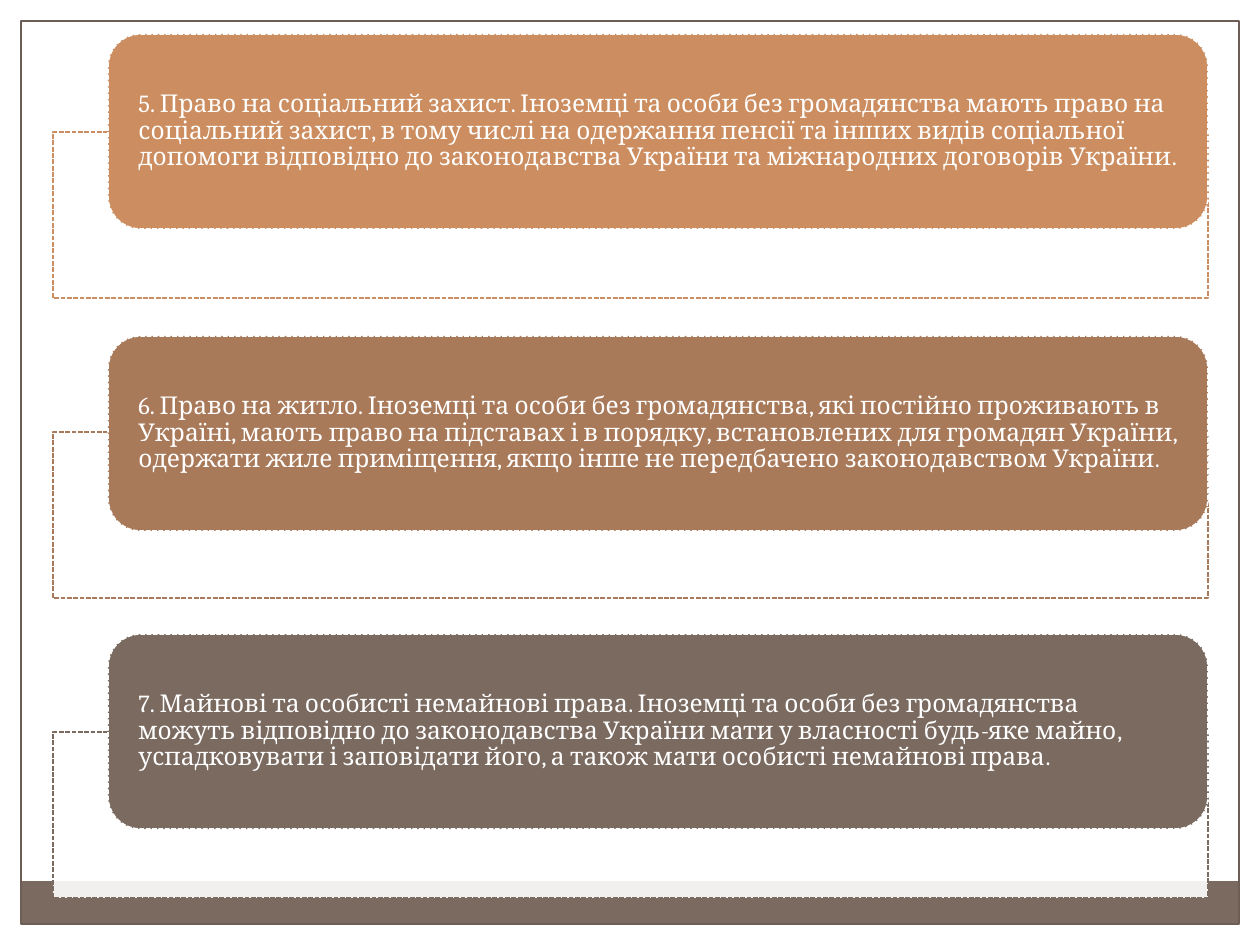
from lxml import etree
from pptx import Presentation
from pptx import util as u
from pptx.dml.color import RGBColor
from pptx.enum import dml, shapes, text
from pptx.oxml.ns import qn

PX = 914400 / 126
WHITE, BROWN = "FFFFFF", "7A6A60"

RIGHTS = [  # text, colour, top of the rounded panel
    ("5. Право на соціальний захист. Іноземці та особи без громадянства мають право на "
     "соціальний захист, в тому числі на одержання пенсії та інших видів соціальної "
     "допомоги відповідно до законодавства України та міжнародних договорів України.",
     "CC8E60", 34),
    ("6. Право на житло. Іноземці та особи без громадянства, які постійно проживають в "
     "Україні, мають право на підставах і в порядку, встановлених для громадян України, "
     "одержати жиле приміщення, якщо інше не передбачено законодавством України.",
     "A97A5A", 336),
    ("7. Майнові та особисті немайнові права. Іноземці та особи без громадянства можуть "
     "відповідно до законодавства України мати у власності будь-яке майно, успадковувати "
     "і заповідати його, а також мати особисті немайнові права.",
     BROWN, 634),
]


def px(n):
    return u.Emu(round(n * PX))


def rgb(value):
    return RGBColor.from_string(value)


def add_box(slide, kind, box, fill=None, line=None, width=0.9, dashed=False):
    shape = slide.shapes.add_shape(kind, *map(px, box))
    shape.shadow.inherit = False
    if fill:
        shape.fill.solid()
        shape.fill.fore_color.rgb = rgb(fill)
    else:
        shape.fill.background()
    if line:
        shape.line.color.rgb = rgb(line)
        shape.line.width = u.Pt(width)
        if dashed:
            shape.line.dash_style = dml.MSO_LINE.SQUARE_DOT
    else:
        shape.line.fill.background()
    return shape


def set_opacity(shape, percent):
    colour = shape.fill._xPr.find(qn("a:solidFill"))[0]
    etree.SubElement(colour, qn("a:alpha"), val=str(percent * 1000))


def add_page_border(slide, width, height, margin=21):
    rect = shapes.MSO_SHAPE.RECTANGLE
    inner = width - 2 * margin
    # White margins
    for edge in [(0, 0, width, margin), (width - margin, 0, margin, height),
                 (0, 0, margin, height)]:
        add_box(slide, rect, edge, WHITE)
    # Footer band and outline
    add_box(slide, rect, (margin, 881, inner, 43), BROWN)
    add_box(slide, rect, (margin, margin, inner, height - 2 * margin),
            line="6C5E55", width=0.75)


def add_right(slide, box, wording, colour, panel_top):
    left, top, width, height = box
    # Dashed frame behind the panel
    frame = add_box(slide, shapes.MSO_SHAPE.RECTANGLE, box, WHITE, colour, dashed=True)
    set_opacity(frame, 90)

    # Rounded panel with the wording
    panel = add_box(slide, shapes.MSO_SHAPE.ROUNDED_RECTANGLE,
                    (left + 55, panel_top, width - 55, 195), colour, WHITE, dashed=True)
    body = panel.text_frame
    body.text = wording
    body.word_wrap = True
    body.vertical_anchor = text.MSO_ANCHOR.MIDDLE
    body.margin_left = body.margin_right = px(21)
    body.margin_top = body.margin_bottom = 0
    paragraph = body.paragraphs[0]
    paragraph.alignment = text.PP_ALIGN.LEFT
    paragraph.line_spacing = 0.9
    font = paragraph.runs[0].font
    font.name, font.size = "Cambria", u.Pt(14)
    font.color.rgb = rgb(WHITE)


def main():
    deck = Presentation()
    deck.slide_width, deck.slide_height = px(1260), px(945)
    slide = deck.slides.add_slide(deck.slide_layouts[6])
    add_page_border(slide, 1260, 945)
    for row, (wording, colour, panel_top) in enumerate(RIGHTS):
        add_right(slide, (53, 132 + 300 * row, 1155, 166), wording, colour, panel_top)
    deck.save("out.pptx")


if __name__ == "__main__":
    main()
